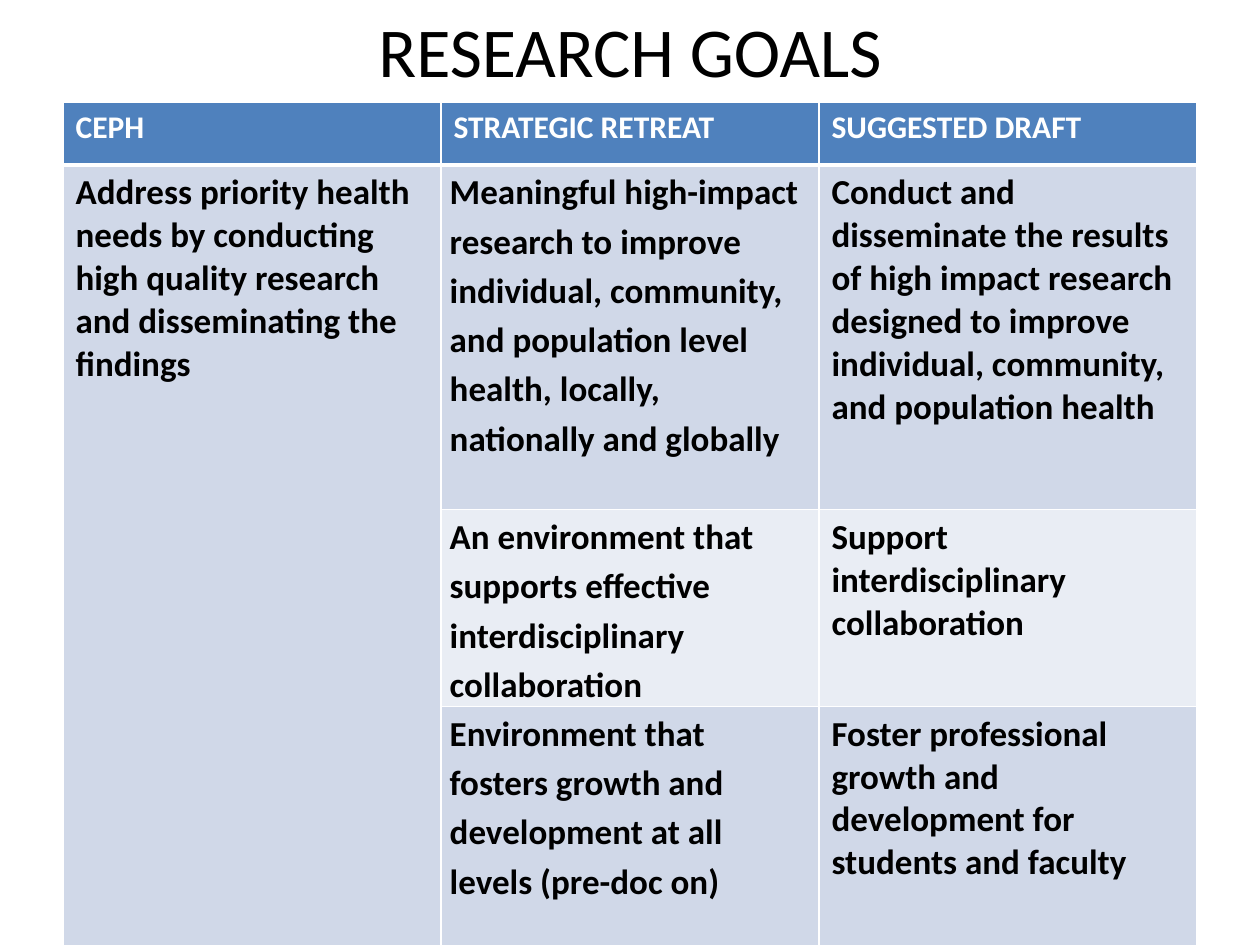
"""Build the research goals comparison slide."""
from dataclasses import dataclass

from lxml import etree
from pptx import Presentation
from pptx import util as u
from pptx.dml import color
from pptx.enum import text
from pptx.oxml import ns


@dataclass(frozen=True)
class Theme:
    font: str = "Calibri"
    ink: str = "000000"
    white: str = "FFFFFF"
    head: str = "4F81BD"
    bands: tuple = ("D0D8E8", "E9EDF4")
    title_pt: int = 40
    head_pt: int = 18
    body_pt: int = 20


T = Theme()


def write(tf, words, rgb, **fmt):
    p = tf.paragraphs[0]
    r = p.add_run()
    r.text = words
    for name, value in {"name": T.font, **fmt}.items():
        setattr(r.font, name, value)
    r.font.color.rgb = color.RGBColor.from_string(rgb)
    return p


def border(cell, side, width):
    ln = etree.SubElement(cell._tc.get_or_add_tcPr(), ns.qn(f"a:ln{side}"), w=str(u.Pt(width)))
    fill = etree.SubElement(ln, ns.qn("a:solidFill"))
    etree.SubElement(fill, ns.qn("a:srgbClr"), val=T.white)


prs = Presentation()
prs.slide_width, prs.slide_height = u.Pt(720), u.Pt(540)
s = prs.slides.add_slide(prs.slide_layouts[6])

tf = s.shapes.add_textbox(u.Pt(36), u.Pt(-6), u.Pt(648), u.Pt(68.4)).text_frame
for name, value in {"word_wrap": True, "vertical_anchor": text.MSO_ANCHOR.MIDDLE}.items():
    setattr(tf, name, value)
p = write(tf, "RESEARCH GOALS", T.ink, size=u.Pt(T.title_pt))
p.alignment = text.PP_ALIGN.CENTER

rows = [
    ("CEPH", "STRATEGIC RETREAT", "SUGGESTED DRAFT"),
    (
        "Address priority health needs by conducting high quality research and disseminating the findings",
        "Meaningful high-impact research to improve individual, community, and population level health, "
        "locally, nationally and globally",
        "Conduct and disseminate the results of high impact research designed to improve individual, "
        "community, and population health",
    ),
    (
        "",
        "An environment that supports effective interdisciplinary collaboration",
        "Support interdisciplinary collaboration",
    ),
    (
        "",
        "Environment that fosters growth and development at all levels (pre-doc on)",
        "Foster professional growth and development for students and faculty",
    ),
]
heights = [36, 197, 112.5, 136.5]
retreat_insets = {"margin_left": 5, "margin_right": 5, "margin_top": 0, "margin_bottom": 0}

table = s.shapes.add_table(
    len(rows), 3, u.Pt(36), u.Pt(58.3), u.Pt(648), u.Pt(sum(heights))
).table
table.cell(1, 0).merge(table.cell(3, 0))

for i, (height, goals) in enumerate(zip(heights, rows)):
    table.rows[i].height = u.Pt(height)
    header = i == 0
    for j, words in enumerate(goals):
        cell = table.cell(i, j)
        for side in "LRTB":
            heavy = (i, side) in ((0, "B"), (1, "T"))
            border(cell, side, 3 if heavy else 1)
        band = T.bands[0] if j == 0 else T.bands[(i - 1) % 2]
        cell.fill.solid()
        cell.fill.fore_color.rgb = color.RGBColor.from_string(T.head if header else band)
        if not words:
            continue
        p = write(
            cell.text_frame,
            words,
            T.white if header else T.ink,
            size=u.Pt(T.head_pt if header else T.body_pt),
            bold=True,
        )
        if j == 1 and not header:
            p.line_spacing = 1.15
            for name, value in retreat_insets.items():
                setattr(cell, name, u.Pt(value))

prs.save("out.pptx")
